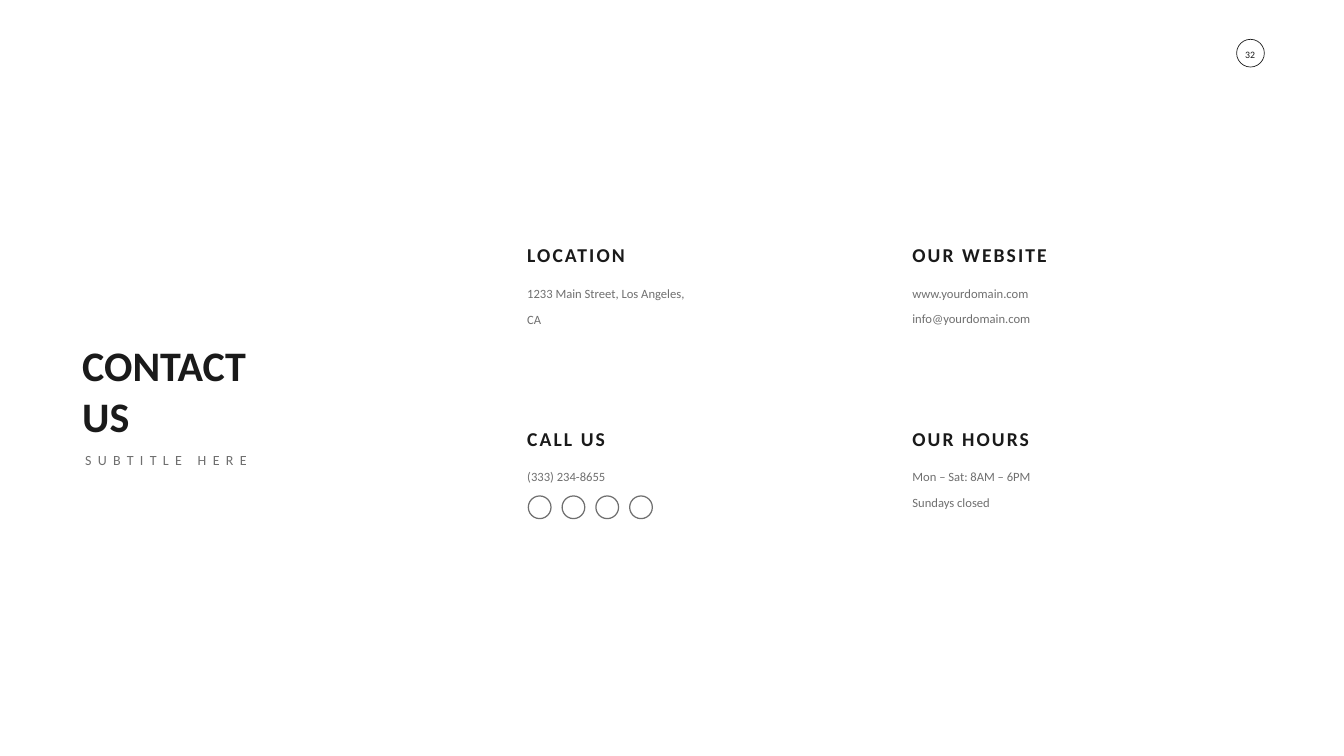
from dataclasses import dataclass

from pptx import Presentation
from pptx.dml.color import RGBColor
from pptx.enum.shapes import MSO_SHAPE as Shape
from pptx.enum.text import MSO_ANCHOR as Anchor, MSO_AUTO_SIZE as AutoSize, PP_ALIGN as Align
from pptx.util import Inches, Pt

WIDTH, HEIGHT = 26.66, 15
INK, GREY = "1A1A1A", "6F6F6F"

# Contact grid: origin and distance between columns and rows, in inches
LEFT, TOP = 10.36, 4.77
COL_STEP, ROW_STEP = 7.64, 3.64
LINE_HEIGHT = 0.57
ICON_SIZE, ICON_STEP, ICON_COUNT = 0.45, 0.67, 4


@dataclass
class Style:
    size: float
    color: str
    bold: bool = False
    tracking: float = 0
    leading: float | None = None
    before: float = 0
    align: Align = Align.LEFT


@dataclass
class Contact:
    col: int
    row: int
    heading: str
    lines: list[str]
    width: float
    height: float = LINE_HEIGHT


TITLE = Style(60, INK, bold=True)
SUBTITLE = Style(20, GREY, tracking=9, before=4)
HEADING = Style(28, INK, bold=True, tracking=3)
BODY = Style(18, GREY, leading=37)
PAGE = Style(14, INK, align=Align.CENTER)

CONTACTS = [
    Contact(0, 0, "LOCATION", ["1233 Main Street, Los Angeles, CA"], 3.36, 1.08),
    Contact(0, 1, "CALL US", ["(333) 234-8655"], 3.36),
    Contact(1, 0, "OUR WEBSITE", ["www.yourdomain.com"], 3.65),
    Contact(1, 1, "OUR HOURS", ["Mon – Sat: 8AM – 6PM", "Sundays closed"], 3.65, 1.08),
]


def rgb(color: str) -> RGBColor:
    return RGBColor.from_string(color)


def write(tf, lines: list[str], style: Style, anchor: Anchor = Anchor.TOP) -> None:
    tf.word_wrap = True
    tf.auto_size = AutoSize.NONE
    tf.vertical_anchor = anchor
    for i, line in enumerate(lines):
        p = tf.paragraphs[0] if i == 0 else tf.add_paragraph()
        p.alignment = style.align
        p.space_before = Pt(style.before)
        if style.leading:
            p.line_spacing = Pt(style.leading)
        r = p.add_run()
        r.text = line
        r.font.name = "Calibri"
        r.font.size = Pt(style.size)
        r.font.bold = style.bold
        r.font.color.rgb = rgb(style.color)
        if style.tracking:
            r._r.get_or_add_rPr().set("spc", str(int(style.tracking * 100)))


def text_box(s, x: float, y: float, w: float, h: float, lines: list[str],
             style: Style, anchor: Anchor = Anchor.TOP) -> None:
    sp = s.shapes.add_textbox(Inches(x), Inches(y), Inches(w), Inches(h))
    write(sp.text_frame, lines, style, anchor)


def circle(s, x: float, y: float, size: float, color: str = "", weight: float = 0):
    sp = s.shapes.add_shape(Shape.OVAL, Inches(x), Inches(y), Inches(size), Inches(size))
    sp.shadow.inherit = False
    sp.fill.background()
    if color:
        sp.line.color.rgb = rgb(color)
        sp.line.width = Pt(weight)
    else:
        sp.line.fill.background()
    return sp


def draw_contact(s, c: Contact) -> None:
    x, y = LEFT + c.col * COL_STEP, TOP + c.row * ROW_STEP
    text_box(s, x, y, 3.36, LINE_HEIGHT, [c.heading], HEADING, Anchor.MIDDLE)
    text_box(s, x, y + 0.64, c.width, c.height, c.lines, BODY)


def main() -> None:
    prs = Presentation()
    prs.slide_width, prs.slide_height = Inches(WIDTH), Inches(HEIGHT)
    s = prs.slides.add_slide(prs.slide_layouts[5])

    # Title and subtitle
    title = s.shapes.title
    title.left, title.top = Inches(1.53), Inches(6.67)
    title.width, title.height = Inches(4.1), Inches(2.12)
    write(title.text_frame, ["CONTACT", "US"], TITLE, Anchor.BOTTOM)
    text_box(s, 1.59, 8.9, 3.89, 0.44, ["SUBTITLE HERE"], SUBTITLE)

    # Page number in its ring
    number = circle(s, 24.6, 0.85, 0.4)
    tf = number.text_frame
    tf.margin_left = tf.margin_right = tf.margin_top = tf.margin_bottom = 0
    write(tf, ["32"], PAGE, Anchor.BOTTOM)
    tf.word_wrap = False
    circle(s, 24.53, 0.78, 0.55, INK, 1)

    # Contact blocks, with the e-mail address under the website
    for contact in CONTACTS:
        draw_contact(s, contact)
    text_box(s, LEFT + COL_STEP, 5.93, 2.73, LINE_HEIGHT,
             ["info@yourdomain.com"], BODY, Anchor.MIDDLE)

    # Row of social media rings
    for i in range(ICON_COUNT):
        circle(s, LEFT + 0.12 + i * ICON_STEP, 9.84, ICON_SIZE, GREY, 1.75)

    prs.save("out.pptx")


if __name__ == "__main__":
    main()
